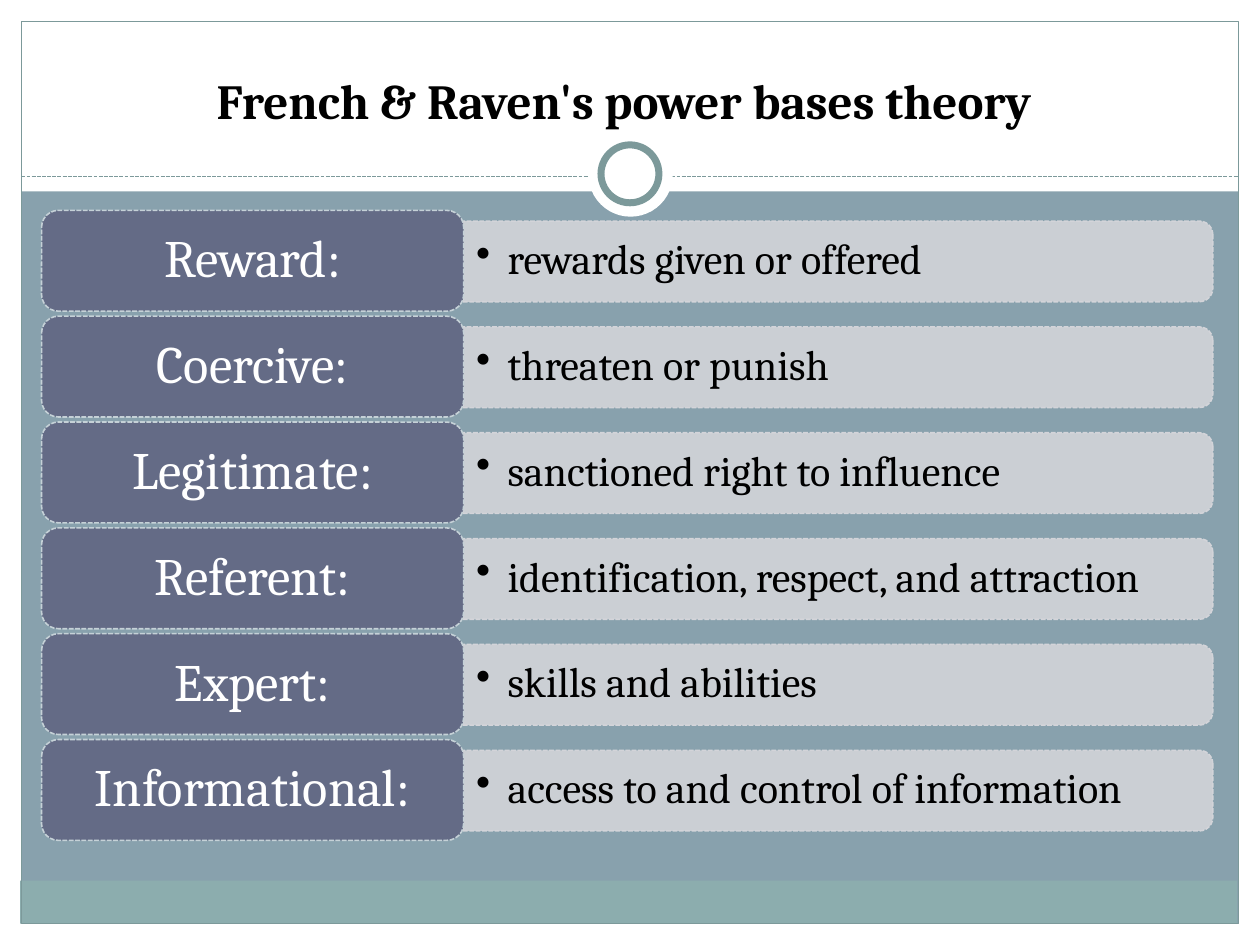
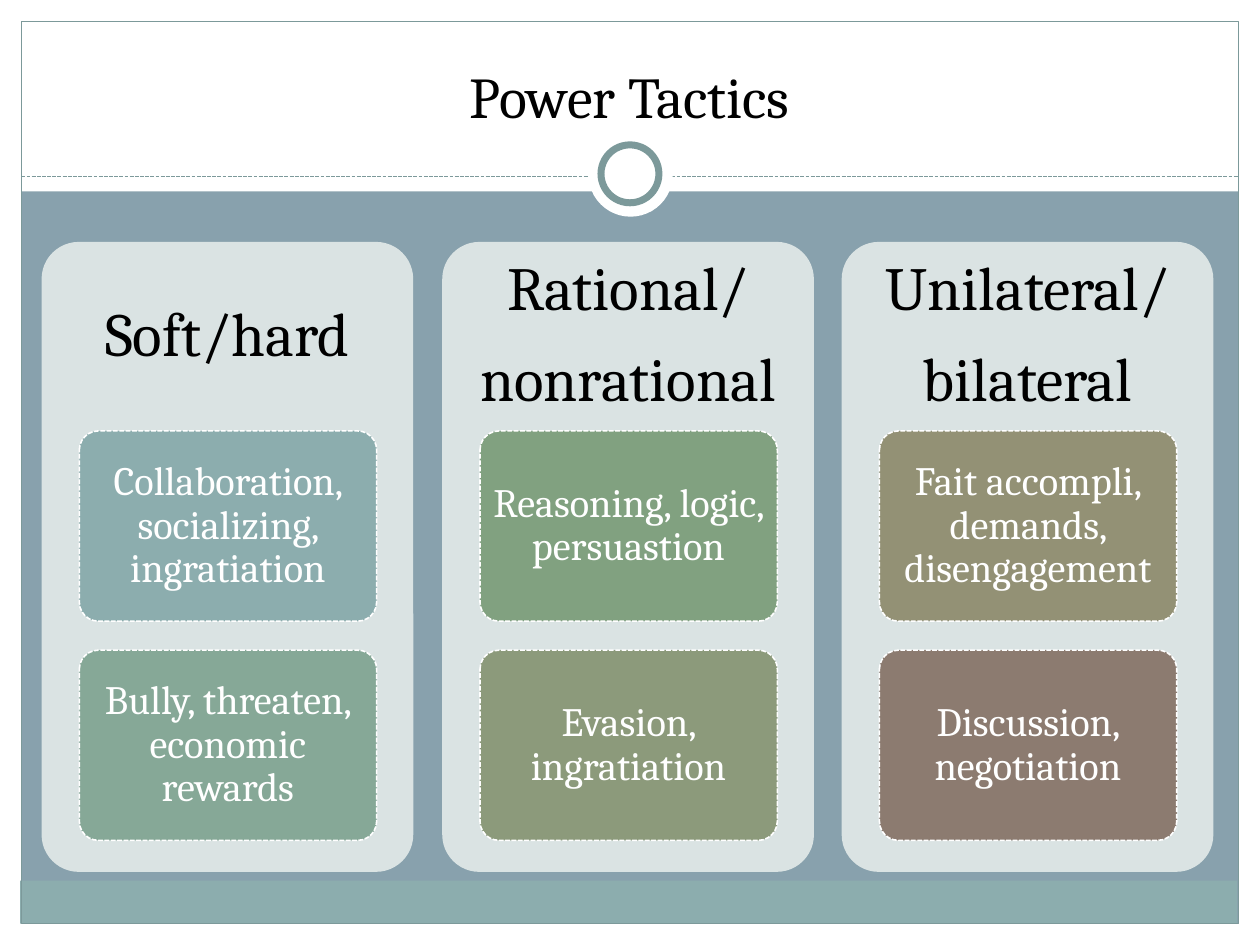
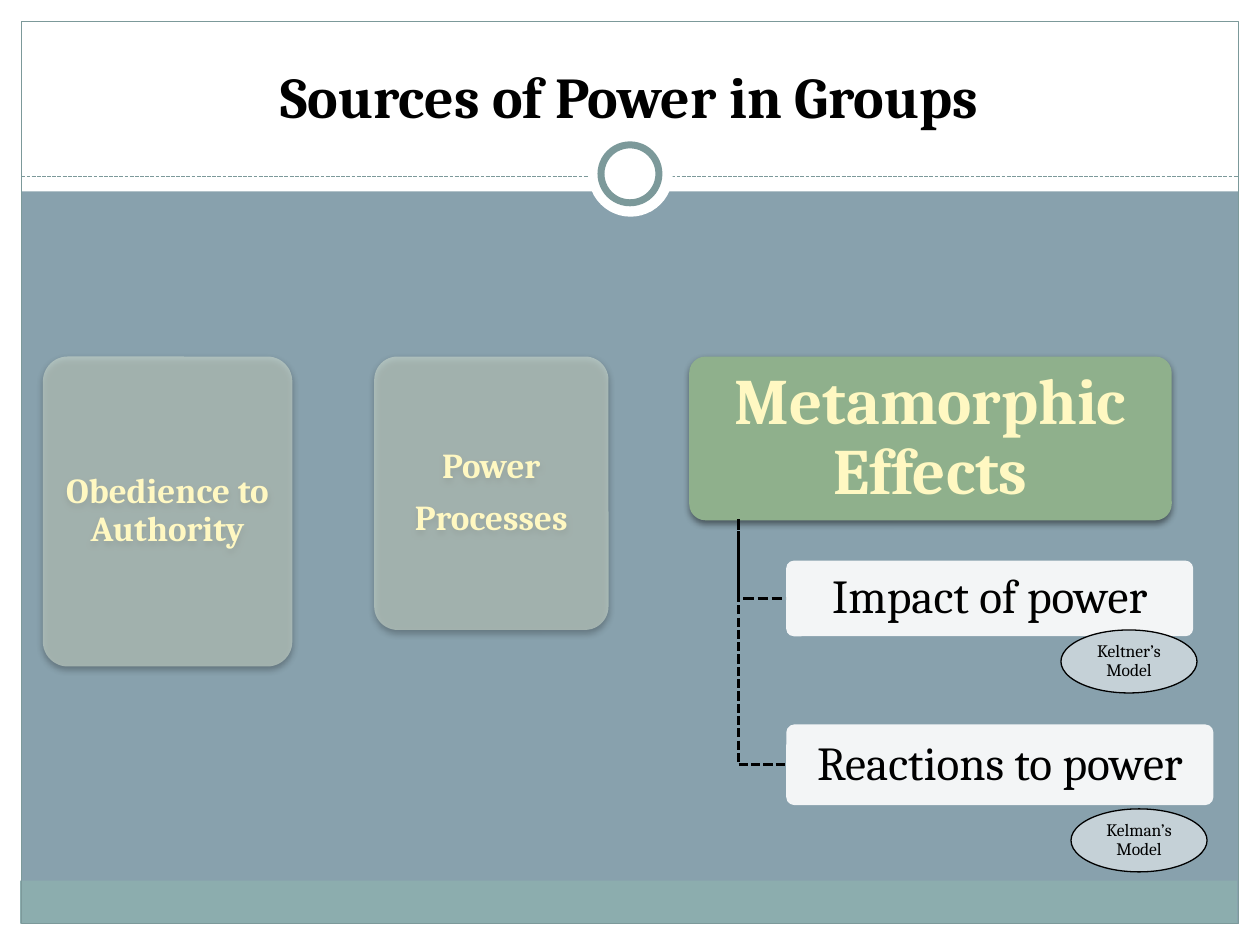
from lxml.etree import SubElement
from pptx import Presentation
from pptx.dml.color import RGBColor
from pptx.enum.dml import MSO_LINE as DASH
from pptx.enum.shapes import MSO_CONNECTOR as CONN, MSO_SHAPE as SHAPE
from pptx.enum.text import MSO_ANCHOR as ANCHOR, MSO_AUTO_SIZE as AUTO, PP_ALIGN as ALIGN
from pptx.oxml.ns import qn
from pptx.util import Pt

PX = 9144  # 100 px to the inch
FONT = "Cambria"
C = {
    "back": "88A1AD", "white": "FFFFFF", "black": "000000", "footer": "8CADAE",
    "frame": "7C999A", "bar": "D3D4D9", "tab": "646B86", "pale": "C5D1D7",
    "panel": "DAE3E3", "muted": "D2DFD1", "active": "8FB08C", "cream": "FFF8C2",
    "teal": "8CADAE", "sea": "86A897", "green": "81A180", "moss": "8C9A7B",
    "olive": "939175", "brown": "8C7B70",
}


def add_box(s, kind, box, fill=None, line=None, width=0.9, dash=None,
            adj=None, alpha=None, shadow=False):
    sp = s.shapes.add_shape(kind, *[v * PX for v in box])
    sp.shadow.inherit = False
    if adj is not None:
        sp.adjustments[0] = adj
    if fill:
        sp.fill.solid()
        sp.fill.fore_color.rgb = RGBColor.from_string(C[fill])
    else:
        sp.fill.background()
    if line:
        sp.line.color.rgb = RGBColor.from_string(C[line])
        sp.line.width = Pt(width)
        sp.line.dash_style = dash
    else:
        sp.line.fill.background()
    spPr = sp.element.spPr
    if alpha:
        SubElement(spPr.find(qn("a:solidFill"))[0], qn("a:alpha"), val=str(alpha * 1000))
    if shadow:
        outer = SubElement(spPr.find(qn("a:effectLst")), qn("a:outerShdw"), blurRad=str(Pt(4)),
                           dist=str(Pt(2)), dir="5400000", rotWithShape="0")
        clr = SubElement(outer, qn("a:srgbClr"), val=C["black"])
        SubElement(clr, qn("a:alpha"), val="45000")
    return sp


def write(sp, lines, size, color="black", bold=False, inset=(10, 5), wrap=True,
          anchor=ANCHOR.MIDDLE, align=ALIGN.CENTER, spacing=0.9, after=0.4, bullet=False):
    tf = sp.text_frame
    mx, my = [v * PX for v in inset]
    frame = {"margin_left": mx, "margin_right": mx, "margin_top": my, "margin_bottom": my,
             "word_wrap": wrap, "auto_size": AUTO.NONE, "vertical_anchor": anchor}
    for name, value in frame.items():
        setattr(tf, name, value)
    for i, line in enumerate(lines):
        p = tf.add_paragraph() if i else tf.paragraphs[0]
        para = {"alignment": align, "line_spacing": spacing,
                "space_before": Pt(0), "space_after": Pt(round(size * after))}
        for name, value in para.items():
            setattr(p, name, value)
        if bullet:
            pPr = p.element.get_or_add_pPr() if hasattr(p, "element") else p._p.get_or_add_pPr()
            pPr.set("marL", str(25 * PX))
            pPr.set("indent", str(-25 * PX))
            SubElement(pPr, qn("a:buChar"), char="•")
        r = p.add_run()
        r.text = line
        for name, value in {"name": FONT, "size": Pt(size), "bold": bold}.items():
            setattr(r.font, name, value)
        r.font.color.rgb = RGBColor.from_string(C[color])


prs = Presentation()
prs.slide_width, prs.slide_height = 1000 * PX, 750 * PX
back = prs.slide_master.background.fill
back.solid()
back.fore_color.rgb = RGBColor.from_string(C["back"])

# Shared frame and title of every slide
bands = [((0, 733, 1000, 17), "white"), ((0, 0, 1000, 152), "white"),
         ((0, 0, 17, 750), "white"), ((983, 0, 17, 750), "white"),
         ((16, 699, 966, 34), "footer")]
titles = [("French & Raven's power bases theory ", 28, True),
          ("Power Tactics", 33, False),
          ("Sources of Power in Groups", 33, True)]
slides = []
for text, size, bold in titles:
    s = prs.slides.add_slide(prs.slide_layouts[5])
    for box, color in bands:
        add_box(s, SHAPE.RECTANGLE, box, color)
    add_box(s, SHAPE.RECTANGLE, (17, 17, 966, 716), line="frame", width=0.75)
    rule = s.shapes.add_connector(CONN.STRAIGHT, 17 * PX, 140 * PX, 983 * PX, 140 * PX)
    rule.line.color.rgb = RGBColor.from_string(C["frame"])
    rule.line.width = Pt(0.75)
    rule.line.dash_style = DASH.SQUARE_DOT
    SubElement(rule.element.spPr, qn("a:effectLst"))
    add_box(s, SHAPE.OVAL, (467, 105, 67, 67), "white")
    add_box(s, SHAPE.OVAL, (477, 115, 46, 46), "white", "frame", 4)
    title = s.shapes.title
    s.shapes.element.append(title.element)  # bring the title above the bands
    title.left, title.top, title.width, title.height = [v * PX for v in (33, 25, 933, 83)]
    write(title, [text], size, bold=bold, anchor=ANCHOR.BOTTOM, spacing=1.0, after=0)
    slides.append(s)
bases, tactics, sources = slides

# Slide 1: a tab and a bar for each power base
rows = [("Reward:", "rewards given or offered"),
        ("Coercive:", "threaten or punish"),
        ("Legitimate:", "sanctioned right to influence"),
        ("Referent:", "identification, respect, and attraction"),
        ("Expert:", "skills and abilities"),
        ("Informational:", "access to and control of information")]
for i, (name, meaning) in enumerate(rows):
    top = 167 + 84 * i
    bar = add_box(bases, SHAPE.ROUND_2_SAME_RECTANGLE, (633, top - 257, 64, 595), "bar", "bar",
                  dash=DASH.SQUARE_DOT, alpha=90)
    bar.rotation = 90
    note = bases.shapes.add_textbox(*[v * PX for v in (368, top + 11, 592, 58)])
    write(note, [meaning], 24, align=ALIGN.LEFT, after=0.17, bullet=True)
    tab = add_box(bases, SHAPE.ROUNDED_RECTANGLE, (33, top, 335, 80), "tab", "pale",
                  dash=DASH.SQUARE_DOT)
    write(tab, [name], 30, "white", inset=(12, 6))

# Slide 2: three panels with two cards each
panels = [
    (["Soft/hard"], [("Collaboration, socializing, ingratiation", "teal"),
                     ("Bully, threaten, economic rewards", "sea")]),
    (["Rational/", "nonrational"], [("Reasoning, logic, persuastion", "green"),
                                    ("Evasion, ingratiation", "moss")]),
    (["Unilateral/", "bilateral"], [("Fait accompli, demands, disengagement", "olive"),
                                    ("Discussion, negotiation", "brown")]),
]
for i, (heading, cards) in enumerate(panels):
    left = 33 + round(317.5 * i)
    add_box(tactics, SHAPE.ROUNDED_RECTANGLE, (left, 192, 295, 500), "panel", adj=0.1)
    head = tactics.shapes.add_textbox(*[v * PX for v in (left, 192, 295, 150)])
    write(head, heading, 35, inset=(15, 15))
    for j, (text, color) in enumerate(cards):
        card = add_box(tactics, SHAPE.ROUNDED_RECTANGLE, (left + 30, 342 + 174 * j, 236, 151),
                       color, "white", dash=DASH.SQUARE_DOT, adj=0.1)
        write(card, [text], 23, "white", inset=(6, 5))

# Slide 3: sources, the last one active
blocks = [((34, 283, 198, 246), ["Obedience to Authority"], 20, "muted", 56, (4, 3)),
          ((297, 283, 186, 217), ["Power", "Processes"], 20, "muted", 56, (4, 3)),
          ((547, 283, 383, 130), ["Metamorphic Effects"], 37, "active", None, (8, 5))]
for box, lines, size, color, alpha, inset in blocks:
    block = add_box(sources, SHAPE.ROUNDED_RECTANGLE, box, color, adj=0.1, alpha=alpha, shadow=True)
    write(block, lines, size, "cream", True, inset)

# Branches under the active source
branches = [("Impact of power", (624, 445, 323, 60), 2),
            ("Reactions to power", (624, 575, 339, 64), 1.75)]
for text, box, width in branches:
    middle = box[1] + box[3] // 2
    path_builder = sources.shapes.build_freeform(586, 412, scale=PX)
    path_builder.add_line_segments([(586, middle), (624, middle)], close=False)
    branch = path_builder.convert_to_shape()
    branch.shadow.inherit = False
    branch.fill.background()
    branch.line.color.rgb = RGBColor.from_string(C["black"])
    branch.line.width = Pt(width)
    branch.line.dash_style = DASH.SQUARE_DOT
    leaf = add_box(sources, SHAPE.ROUNDED_RECTANGLE, box, "white", adj=0.1, alpha=90)
    write(leaf, [text], 27, inset=(6, 4))

# Model labels
for name, left, top in [("Kelman’s", 850, 642), ("Keltner’s", 842, 500)]:
    label = add_box(sources, SHAPE.OVAL, (left, top, 108, 50), "pale", "black", 0.75)
    write(label, [name, "Model"], 10, inset=(0, 0), wrap=False, after=0)

prs.save("out.pptx")
